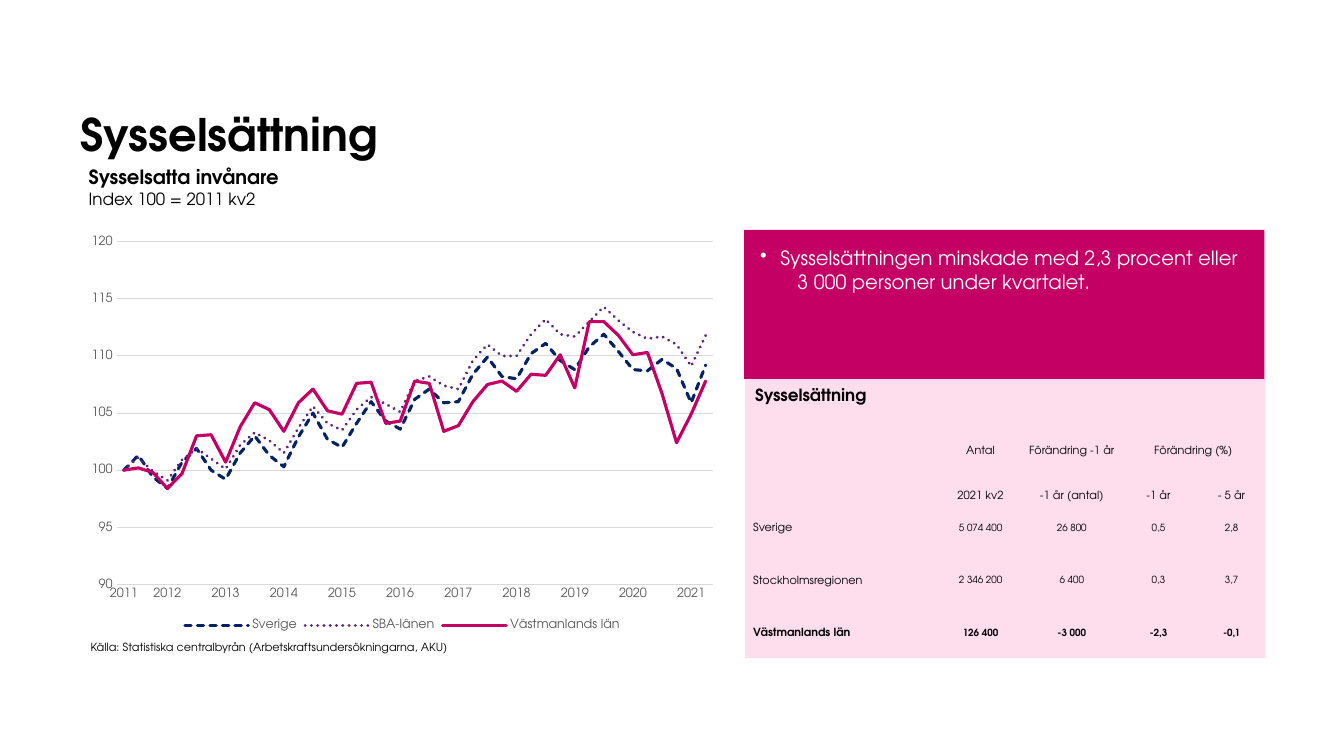
from dataclasses import dataclass

import pptx
import pptx.chart.data
import pptx.enum.chart
import pptx.enum.dml
import pptx.enum.shapes
import pptx.enum.text
import pptx.oxml
from pptx.util import Inches

FONT = "TeX Gyre Adventor"
COLORS = {
    "black": "000000", "white": "FFFFFF", "magenta": "C40064", "pink": "FEDEED",
    "navy": "052364", "purple": "5D237D", "axis": "595959", "grid": "D9D9D9",
}
NO_TABLE_STYLE = "{2D5ABB26-0587-4C30-8999-92F81FD0307C}"
ALIGN = pptx.enum.text.PP_ALIGN
ANCHOR = pptx.enum.text.MSO_ANCHOR
DASH = pptx.enum.dml.MSO_LINE
qn = pptx.oxml.ns.qn
Box = tuple[float, float, float, float]


@dataclass
class Line:
    text: str
    size: float
    bold: bool = False
    color: str = "black"


@dataclass
class Label:
    box: Box
    lines: list[Line]


@dataclass
class Series:
    name: str
    color: str
    dash: DASH
    values: list[float]


TITLE = Label((0.8, 0.37, 9.22, 1.22), [Line("Sysselsättning", 32, True)])
LABELS = [
    Label((0.8, 6.3, 3.87, 0.24),
          [Line("Källa: Statistiska centralbyrån (Arbetskraftsundersökningarna, AKU)", 8)]),
    Label((7.39, 3.77, 1.32, 0.3), [Line("Sysselsättning", 12, True)]),
    Label((0.78, 1.59, 2.12, 0.54),
          [Line("Sysselsatta invånare", 14, True), Line("Index 100 = 2011 kv2", 12)]),
]
MESSAGE = ["Sysselsättningen minskade med 2,3 procent eller", "3 000 personer under kvartalet."]

COLUMN_WIDTHS = [1.91, 0.85, 0.96, 0.76, 0.69]
ROW_HEIGHTS = [0.45, 0.45, 0.52, 0.52, 0.52]
HEADER_ROWS = 2
ROWS = [
    ["", "Antal", "Förändring -1 år", "Förändring (%)", ""],
    ["", "2021 kv2", "-1 år (antal)", "-1 år", "- 5 år"],
    ["Sverige", "5 074 400", "26 800", "0,5", "2,8"],
    ["Stockholmsregionen", "2 346 200", "6 400", "0,3", "3,7"],
    ["Västmanlands län", "126 400", "-3 000", "-2,3", "-0,1"],
]

# Quarterly points; the first quarter of each year carries the year
QUARTERS = ["2011"] + [str(2011 + (q + 1) // 4) if q % 4 == 3 else "" for q in range(1, 41)]
SERIES = [
    Series("Sverige", "navy", DASH.SQUARE_DOT, [
        100, 101.3, 99.4, 98.4, 100.7, 101.9, 100, 99.2, 101.5, 103, 101.3, 100.3, 102.9, 105,
        102.7, 102, 104.1, 106, 104.3, 103.6, 106.2, 107.1, 105.9, 106, 108.4, 109.9, 108.2, 108,
        110.2, 111.1, 109.6, 108.8, 110.8, 111.9, 110.4, 108.8, 108.7, 109.7, 108.9, 105.9, 109.2]),
    Series("SBA-länen", "purple", DASH.ROUND_DOT, [
        100, 101.1, 99.9, 99.1, 100.9, 101.9, 101, 100.1, 102.2, 103.3, 102.6, 101.5, 103.7, 105.6,
        104.1, 103.5, 105.3, 106.4, 105.8, 105.1, 107.8, 108.2, 107.4, 107.1, 109.6, 111, 110, 110,
        111.9, 113.2, 111.9, 111.7, 113, 114.3, 113.1, 112.1, 111.5, 111.7, 111, 109.1, 111.8]),
    Series("Västmanlands län", "magenta", DASH.SOLID, [
        100, 100.2, 99.8, 98.4, 99.7, 103, 103.1, 100.7, 103.8, 105.9, 105.3, 103.4, 105.9, 107.1,
        105.2, 104.9, 107.6, 107.7, 104.1, 104.3, 107.8, 107.6, 103.4, 103.9, 106, 107.5, 107.8,
        106.9, 108.4, 108.3, 110.1, 107.2, 113, 113, 111.8, 110.1, 110.3, 106.7, 102.4, 104.9, 107.8]),
]


def rgb(name: str) -> pptx.dml.color.RGBColor:
    return pptx.dml.color.RGBColor.from_string(COLORS[name])


def set_attrs(obj, values: dict) -> None:
    for name, value in values.items():
        setattr(obj, name, value)


def set_font(font, size: float, color: str, bold: bool = False) -> None:
    set_attrs(font, {"name": FONT, "size": pptx.util.Pt(size), "bold": bold})
    font.color.rgb = rgb(color)


def set_line(line, color: str, width: float) -> None:
    line.color.rgb = rgb(color)
    line.width = pptx.util.Pt(width)


def margins(inches: float) -> dict:
    return {f"margin_{side}": Inches(inches) for side in ("left", "top", "right", "bottom")}


def add_line(p, line: Line) -> None:
    r = p.add_run()
    r.text = line.text
    set_font(r.font, line.size, line.color, line.bold)


def add_label(slide, label: Label, frame: dict) -> None:
    tf = slide.shapes.add_textbox(*map(Inches, label.box)).text_frame
    set_attrs(tf, frame)
    p = tf.paragraphs[0]
    for i, line in enumerate(label.lines):
        if i:
            p.add_line_break()
        add_line(p, line)


def add_panel(slide, box: Box, color: str):
    sp = slide.shapes.add_shape(pptx.enum.shapes.MSO_SHAPE.RECTANGLE, *map(Inches, box))
    sp.shadow.inherit = False
    sp.fill.solid()
    sp.fill.fore_color.rgb = rgb(color)
    sp.line.fill.background()
    return sp


def add_message(slide) -> None:
    """The second line is indented further than the bulleted one."""
    tf = add_panel(slide, (7.38, 2.28, 5.16, 1.48), "magenta").text_frame
    set_attrs(tf, {"word_wrap": True, "vertical_anchor": ANCHOR.TOP, **margins(0.16)})
    for i, text in enumerate(MESSAGE):
        p = tf.add_paragraph() if i else tf.paragraphs[0]
        p.alignment = ALIGN.LEFT
        pPr = p._p.get_or_add_pPr()
        pPr.set("marL", str(Inches(0.37 if i else 0.2)))
        pPr.set("indent", str(Inches(0 if i else -0.2)))
        if i == 0:
            pPr.append(pPr.makeelement(qn("a:buChar"), {"char": "•"}))
        add_line(p, Line(text, 14, color="white"))


def add_employment_table(slide) -> None:
    size = Inches(sum(COLUMN_WIDTHS)), Inches(sum(ROW_HEIGHTS))
    table = slide.shapes.add_table(len(ROWS), len(COLUMN_WIDTHS), Inches(7.39), Inches(4.08), *size).table
    set_attrs(table, {"first_row": False, "horz_banding": False})
    table._tbl.tblPr.find(qn("a:tableStyleId")).text = NO_TABLE_STYLE
    for column, width in zip(table.columns, COLUMN_WIDTHS):
        column.width = Inches(width)
    for r, (row, height) in enumerate(zip(ROWS, ROW_HEIGHTS)):
        table.rows[r].height = Inches(height)
        is_header, is_total = r < HEADER_ROWS, r == len(ROWS) - 1
        for c, text in enumerate(row):
            cell = table.cell(r, c)
            cell.fill.background()
            set_attrs(cell, {**margins(0.01), "margin_left": Inches(0.01 if c else 0.08), "margin_bottom": 0,
                             "vertical_anchor": ANCHOR.BOTTOM if is_header else ANCHOR.MIDDLE})
            p = cell.text_frame.paragraphs[0]
            p.alignment = ALIGN.CENTER if c else ALIGN.LEFT
            if text:
                add_line(p, Line(text, 8 if is_header or c == 0 else 7, is_total))
    table.cell(0, 3).merge(table.cell(0, 4))


def add_index_chart(slide) -> None:
    data = pptx.chart.data.CategoryChartData()
    data.categories = QUARTERS
    for s in SERIES:
        data.add_series(s.name, s.values)
    box = map(Inches, (0.78, 2.26, 6.42, 4.04))
    chart = slide.shapes.add_chart(pptx.enum.chart.XL_CHART_TYPE.LINE, *box, data).chart
    set_font(chart.font, 10, "black")
    set_attrs(chart, {"has_title": False, "has_legend": True})
    set_attrs(chart.legend, {"position": pptx.enum.chart.XL_LEGEND_POSITION.BOTTOM, "include_in_layout": False})
    set_font(chart.legend.font, 9, "axis")
    plot = chart.plots[0]
    plot.vary_by_categories = False
    for s, line in zip(SERIES, plot.series):
        line.smooth = False
        line.marker.style = pptx.enum.chart.XL_MARKER_STYLE.NONE
        set_line(line.format.line, s.color, 2.25)
        line.format.line.dash_style = s.dash
        line._element.find(".//" + qn("a:ln")).set("cap", "rnd")
    years, index = chart.category_axis, chart.value_axis
    for axis in (years, index):
        axis.major_tick_mark = axis.minor_tick_mark = pptx.enum.chart.XL_TICK_MARK.NONE
        set_font(axis.tick_labels.font, 9, "axis")
    set_line(years.format.line, "grid", 0.75)
    skip = years._element.makeelement(qn("c:tickLblSkip"), {"val": "1"})
    years._element.find(qn("c:noMultiLvlLbl")).addprevious(skip)
    set_attrs(index, {"minimum_scale": 90, "maximum_scale": 120, "major_unit": 5})
    index.format.line.fill.background()
    set_line(index.major_gridlines.format.line, "grid", 0.75)


def main() -> None:
    prs = pptx.Presentation()
    set_attrs(prs, {"slide_width": Inches(13.33), "slide_height": Inches(7.5)})
    slide = prs.slides.add_slide(prs.slide_layouts[6])
    add_label(slide, TITLE, {"word_wrap": True, "vertical_anchor": ANCHOR.BOTTOM, **margins(0)})
    add_panel(slide, (7.39, 3.75, 5.16, 2.78), "pink")
    add_message(slide)
    fit = pptx.enum.text.MSO_AUTO_SIZE.SHAPE_TO_FIT_TEXT
    for label in LABELS:
        add_label(slide, label, {"word_wrap": False, "auto_size": fit})
    add_employment_table(slide)
    add_index_chart(slide)
    prs.save("out.pptx")


if __name__ == "__main__":
    main()
